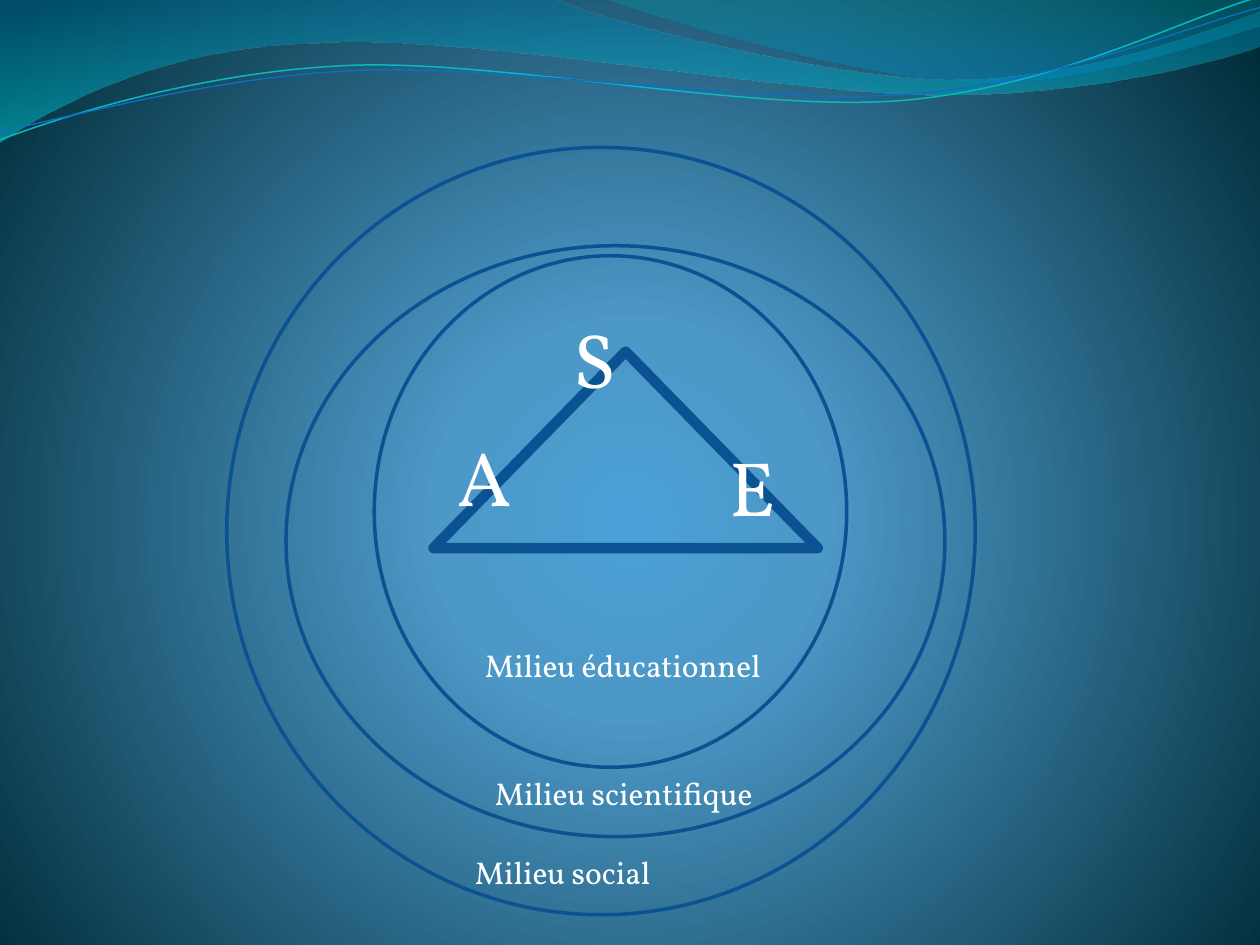
from lxml import etree
from pptx import Presentation
from pptx.dml.color import RGBColor
from pptx.enum.shapes import MSO_SHAPE as SHAPE
from pptx.enum.text import MSO_AUTO_SIZE as AUTO
from pptx.oxml.ns import qn
from pptx.util import Inches, Pt

FONT = "Vollkorn"
WHITE = RGBColor(0xFF, 0xFF, 0xFF)
NAVY = RGBColor(0x0B, 0x52, 0x92)
SKY = RGBColor(0x4A, 0xA0, 0xD6)
STEEL = RGBColor(0x4C, 0x98, 0xC7)
MIDNIGHT = RGBColor(0x00, 0x2C, 0x38)
OCEAN = RGBColor(0x00, 0x74, 0xA1)
CYAN = RGBColor(0x00, 0xC6, 0xCF)
TEAL = RGBColor(0x00, 0xA1, 0xA9)
AZURE = RGBColor(0x00, 0x8B, 0xBF)
TURQUOISE = RGBColor(0x0A, 0xB8, 0xBF)
BLUE = RGBColor(0x0F, 0x6F, 0xC6)

WIDE_BAND = [
    (0, 0), (4.4, -0.01),
    (4.76, 0.17, 6.64, 0.63, 7.58, 0.63), (8.53, 0.63, 9.58, 0.26, 10, 0.09),
    (10.01, 0.36),
    (9.83, 0.44, 8.7, 0.76, 7.46, 0.75), (6.22, 0.75, 3.82, 0.28, 2.57, 0.34),
    (1.29, 0.36, 0.46, 0.83, -0.01, 1.13), (0, 0),
]
CORNER_BAND = [
    (4.79, -0.01),
    (5.09, 0.11, 6.82, 0.62, 7.69, 0.65), (8.56, 0.69, 9.61, 0.32, 10, 0.21),
    (10, 0), (4.79, -0.01),
]
UPPER_WAVE = [
    (0, 1.11),
    (0.48, 0.93, 1.58, 0.57, 2.77, 0.52), (3.95, 0.47, 5.93, 0.89, 7.13, 0.8),
    (8.33, 0.71, 9.38, 0.15, 9.98, -0.02),
]
LOWER_WAVE = [
    (0, 1.04),
    (0.47, 0.96, 1.64, 0.61, 2.83, 0.56), (4.03, 0.51, 5.97, 0.84, 7.17, 0.75),
    (8.36, 0.67, 9.41, 0.21, 10, 0.06),
]


def set_gradient(fill, parent, stops, direction):
    fill.solid()
    grad = etree.Element(qn("a:gradFill"), rotWithShape="1")
    gs_list = etree.SubElement(grad, qn("a:gsLst"))
    for position, color, opacity in stops:
        gs = etree.SubElement(gs_list, qn("a:gs"), pos=str(position * 1000))
        clr = etree.SubElement(gs, qn("a:srgbClr"), val=str(color))
        if opacity < 100:
            etree.SubElement(clr, qn("a:alpha"), val=str(opacity * 1000))
    grad.append(direction)
    parent.replace(parent.find(qn("a:solidFill")), grad)


def add_background(s):
    radial = etree.Element(qn("a:path"), {"path": "circle"})
    etree.SubElement(radial, qn("a:fillToRect"),
                     l="10000", t="110000", r="10000", b="100000")
    fill = s.background.fill
    fill.solid()
    set_gradient(fill, s.element.find(".//" + qn("p:bgPr")),
                 [(0, SKY, 100), (25, STEEL, 100), (100, MIDNIGHT, 100)], radial)


def bend(sp, segments):
    lines = iter(sp.element.findall(".//" + qn("a:lnTo")))
    for segment in segments[1:]:
        line = next(lines)
        if len(segment) == 6:
            curve = etree.Element(qn("a:cubicBezTo"))
            line.addprevious(curve)
            for corner in (line, next(lines), next(lines)):
                curve.append(corner[0])
                corner.getparent().remove(corner)


def add_outline(s, left, top, segments, close):
    points = [(left + Inches(x), top + Inches(y))
              for segment in segments
              for x, y in zip(segment[::2], segment[1::2])]
    builder = s.shapes.build_freeform(*points[0])
    builder.add_line_segments(points[1:], close=close)
    sp = builder.convert_to_shape()
    bend(sp, segments)
    sp.shadow.inherit = False
    return sp


def add_ribbon(s, left, top):
    for segments, stops in (
        (WIDE_BAND, [(0, OCEAN, 45), (100, CYAN, 55)]),
        (CORNER_BAND, [(0, TEAL, 30), (80, AZURE, 45)]),
    ):
        sp = add_outline(s, left, top, segments, True)
        sp.line.fill.background()
        downward = etree.Element(qn("a:lin"), ang="5400000", scaled="1")
        set_gradient(sp.fill, sp.element.spPr, stops, downward)
    for segments, color, width in (
        (UPPER_WAVE, TURQUOISE, 0.85), (LOWER_WAVE, BLUE, 0.75),
    ):
        sp = add_outline(s, left, top, segments, False)
        sp.fill.background()
        sp.line.color.rgb = color
        sp.line.width = Pt(width)


def add_ring(s, shape, left, top, width, height, weight):
    sp = s.shapes.add_shape(shape, left, top, width, height)
    sp.shadow.inherit = False
    sp.fill.background()
    sp.line.color.rgb = NAVY
    sp.line.width = Pt(weight)


def add_label(s, text, left, top, width, height, size):
    tf = s.shapes.add_textbox(left, top, width, height).text_frame
    tf.word_wrap = False
    tf.auto_size = AUTO.SHAPE_TO_FIT_TEXT
    r = tf.paragraphs[0].add_run()
    r.text = text
    r.font.name = FONT
    r.font.size = Pt(size)
    r.font.color.rgb = WHITE


def add_diagram(s, left, top):
    add_ring(s, SHAPE.ISOSCELES_TRIANGLE, left + Inches(1.64), top + Inches(1.62),
             Inches(3.05), Inches(1.56), 6)
    for text, x, y, width in (
        ("S", 2.65, 1.25, 0.52), ("A", 1.73, 2.19, 0.76), ("E", 3.89, 2.27, 0.56),
    ):
        add_label(s, text, left + Inches(x), top + Inches(y),
                  Inches(width), Inches(0.84), 44)
    for x, y, width, height in (
        (1.17, 0.86, 3.75, 4.06), (0.47, 0.78, 5.23, 4.69), (0, 0, 5.94, 6.09),
    ):
        add_ring(s, SHAPE.OVAL, left + Inches(x), top + Inches(y),
                 Inches(width), Inches(height), 2)
    for text, x, y, width in (
        ("Milieu éducationnel", 1.95, 3.91, 2.45),
        ("Milieu scientifique", 2.03, 4.92, 2.3),
        ("Milieu social", 1.87, 5.55, 1.71),
    ):
        add_label(s, text, left + Inches(x), top + Inches(y),
                  Inches(width), Inches(0.4), 18)


def main():
    prs = Presentation()
    prs.slide_width, prs.slide_height = Inches(10), Inches(7.5)
    s = prs.slides.add_slide(prs.slide_layouts[6])
    add_background(s)
    add_ribbon(s, Inches(0), Inches(0))
    add_diagram(s, Inches(1.8), Inches(1.17))
    prs.save("out.pptx")


if __name__ == "__main__":
    main()
